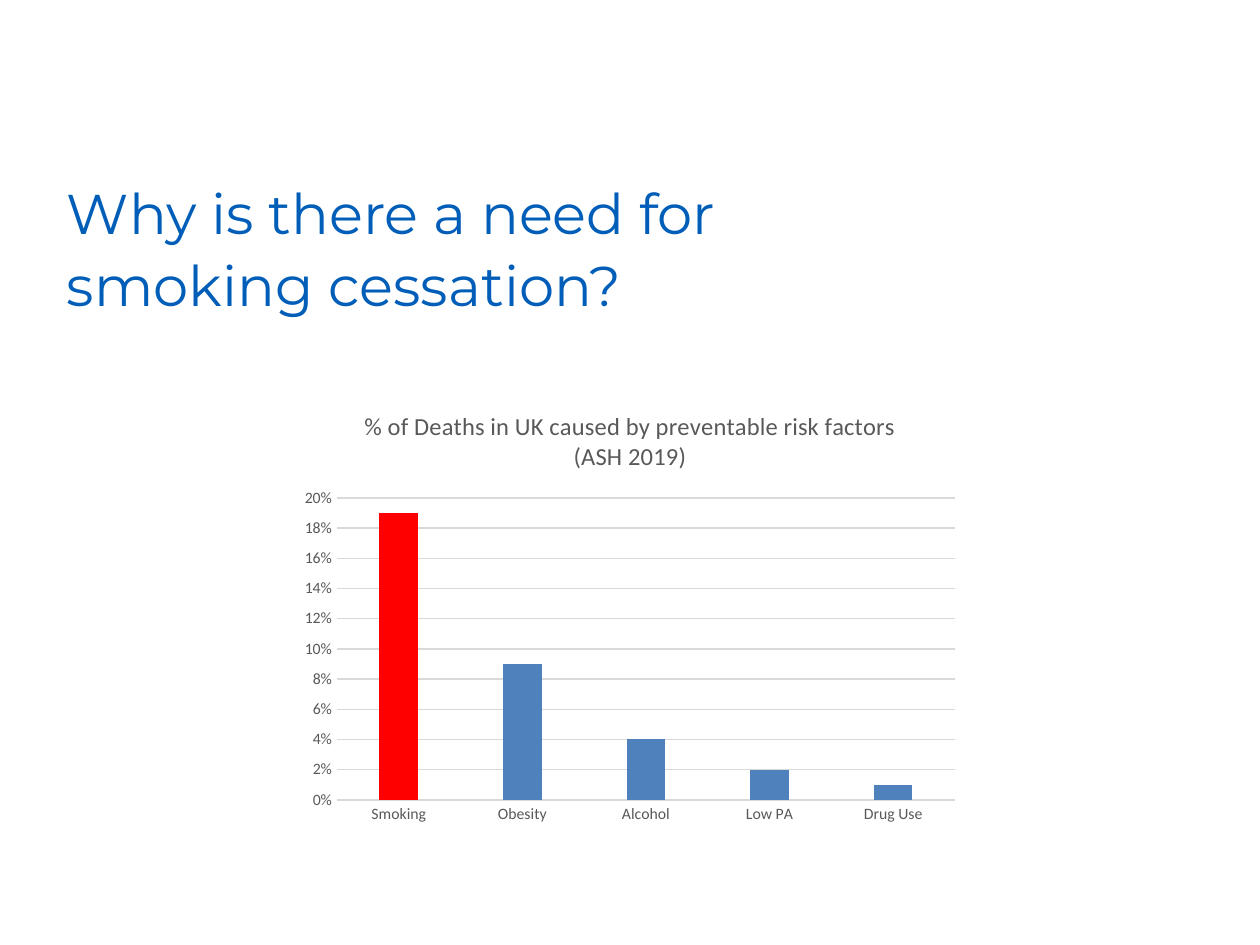
from lxml import etree
from pptx import Presentation
from pptx.chart.data import CategoryChartData
from pptx.dml.color import RGBColor
from pptx.enum.chart import XL_CHART_TYPE as ChartType, XL_TICK_MARK as TickMark
from pptx.oxml.ns import qn
from pptx.util import Emu, Pt

PX = 914400 // 126
COLORS = {"heading": "005EB8", "label": "595959", "grid": "D9D9D9",
          "bar": "4F81BD", "highlight": "FF0000"}
HEADING = ["Why is there a need for", "smoking cessation?"]
HEADING_BOX = (67, 179, 1172, 112)
CHART_TITLE = "% of Deaths in UK caused by preventable risk factors (ASH 2019)"
CHART_BOX = (291, 389, 678, 442)
PLOT_BOX = (337, 498, 618, 302)
DEATHS = {"Smoking": 0.19, "Obesity": 0.09, "Alcohol": 0.04,
          "Low PA": 0.02, "Drug Use": 0.01}
HIGHLIGHTED = "Smoking"


def px(box):
    return [Emu(value * PX) for value in box]


def color(name):
    return RGBColor.from_string(COLORS[name])


def style_font(font, name, size, color_name):
    font.name = name
    font.size = Pt(size)
    font.bold = False
    font.color.rgb = color(color_name)


def style_line(line):
    line.color.rgb = color("grid")
    line.width = Pt(0.75)


def add_heading(slide):
    frame = slide.shapes.add_textbox(*px(HEADING_BOX)).text_frame
    frame.word_wrap = True
    frame.margin_left = frame.margin_right = 0
    frame.margin_top = frame.margin_bottom = 0
    frame.text = "\n".join(HEADING)
    for paragraph in frame.paragraphs:
        paragraph.space_after = Pt(2.5)
        style_font(paragraph.runs[0].font, "Montserrat", 32, "heading")


def place_plot(chart):
    """Fix the inner plot area at PLOT_BOX, as fractions of the chart."""
    left, top, width, height = CHART_BOX
    plot_left, plot_top, plot_width, plot_height = PLOT_BOX
    settings = {
        "layoutTarget": "inner", "xMode": "edge", "yMode": "edge",
        "x": (plot_left - left) / width, "y": (plot_top - top) / height,
        "w": plot_width / width, "h": plot_height / height,
    }
    plot_area = chart.element.find(".//" + qn("c:plotArea"))
    for old in plot_area.findall(qn("c:layout")):
        plot_area.remove(old)
    layout = etree.Element(qn("c:layout"))
    manual = etree.SubElement(layout, qn("c:manualLayout"))
    for tag, value in settings.items():
        text = value if isinstance(value, str) else f"{value:.4f}"
        etree.SubElement(manual, qn("c:" + tag)).set("val", text)
    plot_area.insert(0, layout)


def add_deaths_chart(slide):
    data = CategoryChartData(number_format="0%")
    data.categories = list(DEATHS)
    data.add_series("Series 1", list(DEATHS.values()))
    chart = slide.shapes.add_chart(
        ChartType.COLUMN_CLUSTERED, *px(CHART_BOX), data).chart
    chart.has_legend = False
    style_font(chart.font, "Calibri", 10, "label")

    chart.has_title = True
    title = chart.chart_title
    title.include_in_layout = False
    title.text_frame.text = CHART_TITLE
    style_font(title.text_frame.paragraphs[0].runs[0].font, "Calibri", 14, "label")

    for axis in (chart.category_axis, chart.value_axis):
        axis.major_tick_mark = axis.minor_tick_mark = TickMark.NONE
        style_font(axis.tick_labels.font, "Calibri", 9, "label")
    style_line(chart.category_axis.format.line)

    values = chart.value_axis
    values.minimum_scale, values.maximum_scale, values.major_unit = 0, 0.2, 0.02
    values.tick_labels.number_format = "0%"
    values.tick_labels.number_format_is_linked = False
    values.format.line.fill.background()
    values.has_major_gridlines = True
    style_line(values.major_gridlines.format.line)

    plot = chart.plots[0]
    plot.vary_by_categories = False
    plot.gap_width, plot.overlap = 219, -27
    series = plot.series[0]
    highlight = series.points[list(DEATHS).index(HIGHLIGHTED)]
    for item, name in ((series, "bar"), (highlight, "highlight")):
        item.format.fill.solid()
        item.format.fill.fore_color.rgb = color(name)
    place_plot(chart)


def main():
    presentation = Presentation()
    presentation.slide_width, presentation.slide_height = px((1260, 945))
    slide = presentation.slides.add_slide(presentation.slide_layouts[6])
    add_heading(slide)
    add_deaths_chart(slide)
    presentation.save("out.pptx")


if __name__ == "__main__":
    main()
